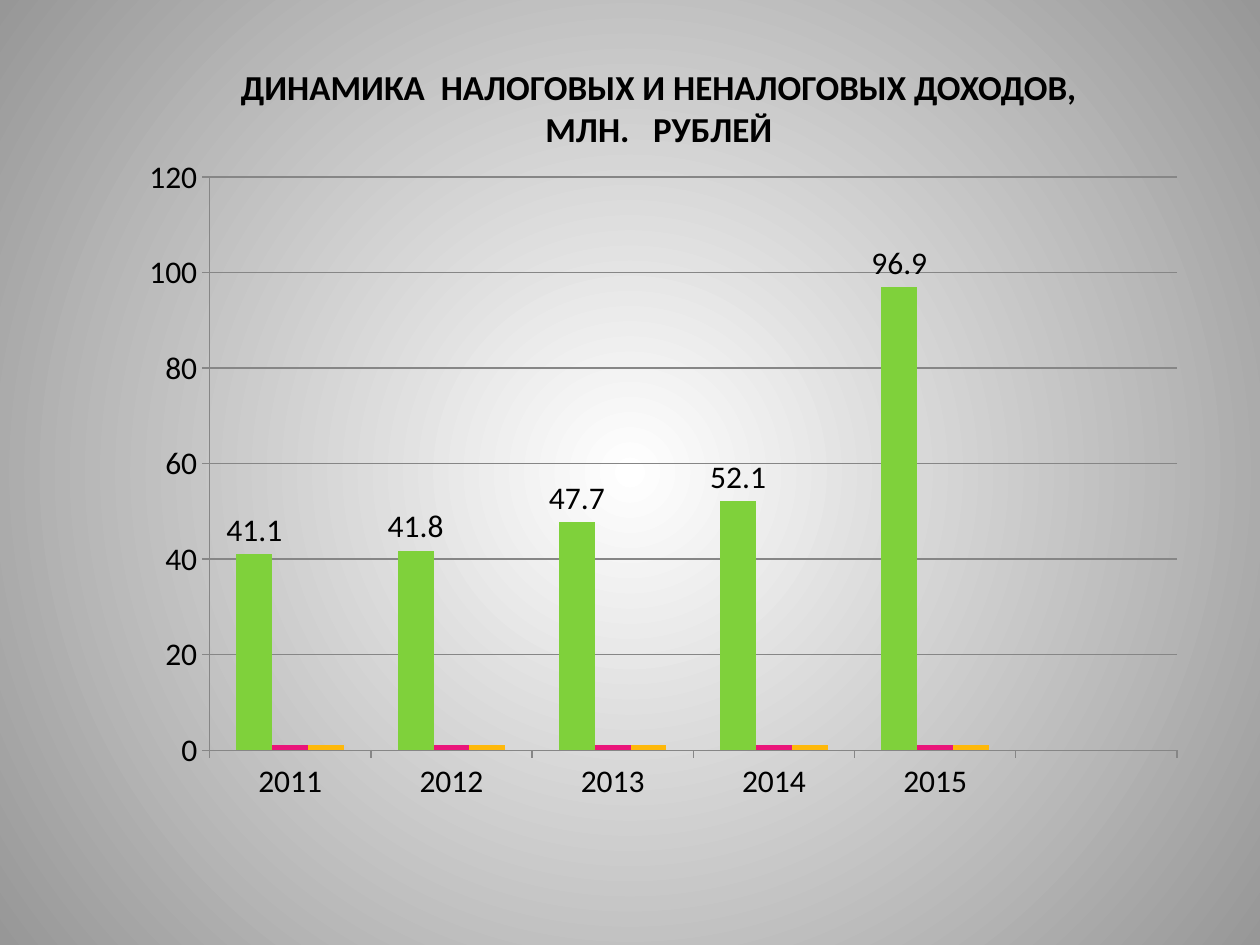
from dataclasses import dataclass

from lxml import etree
from pptx import Presentation
from pptx.chart.data import CategoryChartData
from pptx.dml.color import RGBColor as RGB
from pptx.enum.chart import XL_CHART_TYPE as ChartType
from pptx.enum.chart import XL_LABEL_POSITION as LabelPos
from pptx.enum.chart import XL_TICK_MARK as Tick
from pptx.enum.text import PP_ALIGN as Align
from pptx.oxml.ns import qn
from pptx.util import Pt


@dataclass(frozen=True)
class Theme:
    font: str = "Calibri"
    title_size: int = 20
    chart_size: int = 18
    ink: RGB = RGB(0, 0, 0)
    grid: RGB = RGB(0x86, 0x86, 0x86)
    center: RGB = RGB(0xFF, 0xFF, 0xFF)
    edge: RGB = RGB(0x97, 0x97, 0x97)
    series: tuple = (RGB(0x7F, 0xD1, 0x3B), RGB(0xEA, 0x15, 0x7A), RGB(0xFE, 0xB8, 0x0A))


THEME = Theme()
TITLE = ("ДИНАМИКА  НАЛОГОВЫХ И НЕНАЛОГОВЫХ ДОХОДОВ,", "МЛН.   РУБЛЕЙ")
YEARS = ("2011", "2012", "2013", "2014", "2015", "")
INCOME = (41.1, 41.8, 47.7, 52.1, 96.9, None)
ONES = (1, 1, 1, 1, 1, None)
PLOT_BOX = {"x": 0.133, "y": 0.056, "w": 0.855, "h": 0.808}


def style_font(font, size, bold=False):
    font.name = THEME.font
    font.size = Pt(size)
    font.bold = bold
    font.color.rgb = THEME.ink


def paint_background(slide):
    fill = slide.background.fill
    fill.gradient()
    for stop, color in zip(fill.gradient_stops, (THEME.center, THEME.edge)):
        stop.color.rgb = color
    grad = next(slide.element.iter(qn("a:gradFill")))
    grad.remove(grad.find(qn("a:lin")))
    circle = etree.SubElement(grad, qn("a:path"), {"path": "circle"})
    etree.SubElement(circle, qn("a:fillToRect"), {side: "50000" for side in "ltrb"})


def add_title(slide, left, top, width, height):
    tf = slide.shapes.add_textbox(Pt(left), Pt(top), Pt(width), Pt(height)).text_frame
    tf.word_wrap = True
    tf.text = "\n".join(TITLE)
    for p in tf.paragraphs:
        p.alignment = Align.CENTER
        for r in p.runs:
            style_font(r.font, THEME.title_size, bold=True)


def set_plot_layout(chart):
    area = next(chart.element.iter(qn("c:plotArea")))
    for old in area.findall(qn("c:layout")):
        area.remove(old)
    layout = etree.Element(qn("c:layout"))
    manual = etree.SubElement(layout, qn("c:manualLayout"))
    settings = {"layoutTarget": "inner", "xMode": "edge", "yMode": "edge", **PLOT_BOX}
    for name, value in settings.items():
        etree.SubElement(manual, qn(f"c:{name}"), {"val": str(value)})
    area.insert(0, layout)


def style_axes(chart):
    for axis in (chart.category_axis, chart.value_axis):
        axis.major_tick_mark = Tick.CROSS if axis is None else Tick.OUTSIDE
        axis.minor_tick_mark = Tick.NONE
        axis.format.line.color.rgb = THEME.grid
        axis.format.line.width = Pt(0.75)
    axis = chart.value_axis
    axis.minimum_scale, axis.maximum_scale, axis.major_unit = 0, 120, 20
    axis.has_major_gridlines = True
    axis.major_gridlines.format.line.color.rgb = THEME.grid
    axis.major_gridlines.format.line.width = Pt(0.75)


def add_income_chart(slide, left, top, width, height):
    data = CategoryChartData()
    data.categories = YEARS
    for number, values in enumerate((INCOME, ONES, ONES), 1):
        data.add_series(f"Series {number}", values)
    chart = slide.shapes.add_chart(
        ChartType.COLUMN_CLUSTERED, Pt(left), Pt(top), Pt(width), Pt(height), data
    ).chart
    chart.has_title = False
    chart.has_legend = False
    style_font(chart.font, THEME.chart_size)
    style_axes(chart)
    set_plot_layout(chart)

    plot = chart.plots[0]
    plot.gap_width = 150
    plot.overlap = 0
    plot.vary_by_categories = False
    for series, color in zip(plot.series, THEME.series):
        series.format.fill.solid()
        series.format.fill.fore_color.rgb = color
    labels = plot.series[0].data_labels
    labels.show_value = True
    labels.position = LabelPos.OUTSIDE_END
    style_font(labels.font, THEME.chart_size)


def main():
    prs = Presentation()
    prs.slide_width, prs.slide_height = Pt(720), Pt(540)
    slide = prs.slides.add_slide(prs.slide_layouts[6])
    paint_background(slide)
    add_title(slide, 112.3, 33.8, 528.5, 55.4)
    add_income_chart(slide, 33.8, 78.5, 646.6, 405.4)
    prs.save("out.pptx")


if __name__ == "__main__":
    main()
